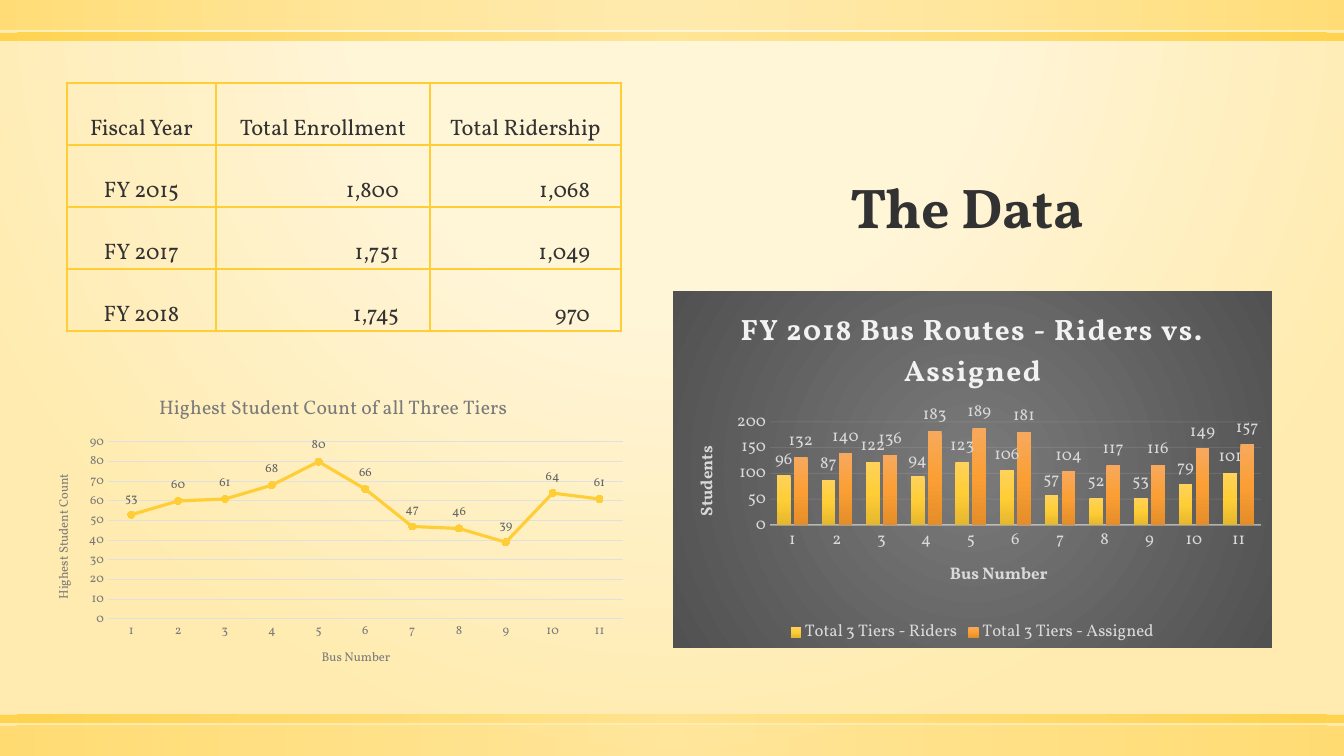
from dataclasses import dataclass
from typing import Any, NamedTuple, Optional

from lxml import etree
from pptx import Presentation
from pptx import util as u
from pptx.chart.data import CategoryChartData
from pptx.dml.color import RGBColor
from pptx.enum import chart as ch, shapes, text
from pptx.oxml import parse_xml
from pptx.oxml.ns import nsdecls, qn

EMU_PER_PX = 12192000 / 1344
FONT = "Vollkorn"
INK = RGBColor(0x32, 0x32, 0x32)
GOLD = RGBColor(0xFF, 0xCD, 0x36)
PALE_GOLD = RGBColor(0xFF, 0xE1, 0x86)
LIGHT_GOLD = RGBColor(0xFF, 0xD2, 0x5B)
DARK_GOLD = RGBColor(0xE5, 0xB7, 0x2E)
LIGHT_ORANGE = RGBColor(0xF6, 0xA9, 0x5E)
ORANGE = RGBColor(0xFB, 0x9F, 0x35)
DARK_ORANGE = RGBColor(0xE5, 0x8D, 0x29)
CREAM = RGBColor(0xFF, 0xF5, 0xD7)
SAND = RGBColor(0xFF, 0xEB, 0xAF)
GREY = RGBColor(0x7A, 0x7A, 0x7A)
LABEL_GREY = RGBColor(0x65, 0x65, 0x65)
CHARCOAL = RGBColor(0x51, 0x51, 0x51)
RULE_GREY = RGBColor(0xE0, 0xE0, 0xE0)
SILVER = RGBColor(0xD9, 0xD9, 0xD9)
OFF_WHITE = RGBColor(0xF2, 0xF2, 0xF2)


class Box(NamedTuple):
    left: int
    top: int
    width: int
    height: int


class Stop(NamedTuple):
    position: int
    color: RGBColor
    opacity: int = 100


@dataclass(frozen=True)
class Gradient:
    """A linear blend when an angle is given, otherwise a circular one."""
    stops: tuple[Stop, ...]
    angle: Optional[int] = None
    focus: tuple[int, int, int, int] = (50, 50, 50, 50)


@dataclass(frozen=True)
class Series:
    name: str
    values: tuple[int, ...]
    gradient: Optional[Gradient] = None


@dataclass(frozen=True)
class BusChart:
    kind: ch.XL_CHART_TYPE
    box: Box
    plot: Box
    title: str
    title_size: int
    title_color: RGBColor
    value_title: str
    top_value: int
    step: int
    size: int
    color: RGBColor
    label_color: RGBColor
    label_position: ch.XL_LABEL_POSITION
    rule_color: RGBColor
    axis_width: float
    axis_opacity: int
    grid_opacity: int
    bold: bool
    series: tuple[Series, ...]
    background: Optional[Gradient] = None


BUSES = [str(bus) for bus in range(1, 12)]
BACKDROP = Gradient((Stop(0, CREAM, 59), Stop(40, CREAM, 66), Stop(100, SAND)), focus=(50, -80, 50, 180))
BANDS = ((Box(0, 726, 1344, 30), 50), (Box(0, 715, 1344, 8), 80),
         (Box(0, 0, 1344, 30), 50), (Box(0, 33, 1344, 8), 80))
COLUMNS = (149, 214, 191)
ROW_HEIGHT = 62
ROWS = (("Fiscal Year", "Total Enrollment", "Total Ridership"),
        ("FY 2015", "1,800", "1,068"),
        ("FY 2017", "1,751", "1,049"),
        ("FY 2018", "1,745", "970"))
HIGHEST_COUNT = BusChart(
    ch.XL_CHART_TYPE.LINE_MARKERS, Box(32, 378, 603, 313), Box(108, 442, 515, 177),
    "Highest Student Count of all Three Tiers", 14, GREY, "Highest Student Count", 90, 10,
    9, GREY, LABEL_GREY, ch.XL_LABEL_POSITION.ABOVE, RULE_GREY, 0.75, 100, 100, False,
    (Series("Series 1", (53, 60, 61, 68, 80, 66, 47, 46, 39, 64, 61)),))
RIDERS_VS_ASSIGNED = BusChart(
    ch.XL_CHART_TYPE.COLUMN_CLUSTERED, Box(673, 291, 599, 357), Box(770, 422, 491, 103),
    "FY 2018 Bus Routes - Riders vs. Assigned", 21, OFF_WHITE, "Students", 200, 50,
    12, SILVER, SILVER, ch.XL_LABEL_POSITION.OUTSIDE_END, OFF_WHITE, 1, 54, 10, True,
    (Series("Total 3 Tiers - Riders", (96, 87, 122, 94, 123, 106, 57, 52, 53, 79, 101),
            Gradient((Stop(0, LIGHT_GOLD), Stop(50, GOLD), Stop(100, DARK_GOLD)), 90)),
     Series("Total 3 Tiers - Assigned", (132, 140, 136, 183, 189, 181, 104, 117, 116, 149, 157),
            Gradient((Stop(0, LIGHT_ORANGE), Stop(50, ORANGE), Stop(100, DARK_ORANGE)), 90))),
    Gradient((Stop(0, GREY), Stop(100, CHARCOAL))))


def px(length: int) -> u.Emu:
    return u.Emu(round(length * EMU_PER_PX))


def place(box: Box) -> list[u.Emu]:
    return [px(length) for length in box]


def style(font: Any, size: int, color: RGBColor, bold: bool = False) -> None:
    font.name, font.size, font.bold = FONT, u.Pt(size), bold
    font.color.rgb = color


def gradient_xml(gradient: Gradient) -> Any:
    stops = "".join(
        f'<a:gs pos="{stop.position * 1000}"><a:srgbClr val="{stop.color}">'
        f'<a:alpha val="{stop.opacity * 1000}"/></a:srgbClr></a:gs>' for stop in gradient.stops)
    if gradient.angle is None:
        sides = " ".join(f'{side}="{share * 1000}"' for side, share in zip("ltrb", gradient.focus))
        direction = f'<a:path path="circle"><a:fillToRect {sides}/></a:path>'
    else:
        direction = f'<a:lin ang="{gradient.angle * 60000}" scaled="0"/>'
    return parse_xml(f'<a:gradFill {nsdecls("a")} rotWithShape="1"><a:gsLst>{stops}</a:gsLst>{direction}</a:gradFill>')


def paint(fill: Any, owner: Any, gradient: Gradient) -> None:
    """Swap the first solid fill inside the owner element for the gradient."""
    fill.solid()
    solid = next(owner.iter(qn("a:solidFill")))
    solid.getparent().replace(solid, gradient_xml(gradient))


def add_band(page: Any, box: Box, opacity: int) -> None:
    band = page.shapes.add_shape(shapes.MSO_SHAPE.RECTANGLE, *place(box))
    band.shadow.inherit = False
    band.line.fill.background()
    paint(band.fill, band.element, Gradient((Stop(0, PALE_GOLD, opacity), Stop(100, GOLD, opacity))))


def add_title(page: Any) -> None:
    frame = page.shapes.add_textbox(*place(Box(735, 100, 464, 146))).text_frame
    frame.word_wrap = True
    frame.vertical_anchor = text.MSO_ANCHOR.BOTTOM
    frame.text = "The Data"
    para = frame.paragraphs[0]
    para.alignment, para.line_spacing = text.PP_ALIGN.CENTER, 0.9
    style(para.runs[0].font, 40, INK, True)


def add_table(page: Any) -> None:
    box = Box(67, 83, sum(COLUMNS), ROW_HEIGHT * len(ROWS))
    table = page.shapes.add_table(len(ROWS), len(COLUMNS), *place(box)).table
    table.first_row = table.horz_banding = False
    for column, width in zip(table.columns, COLUMNS):
        column.width = px(width)
    for r, row in enumerate(ROWS):
        table.rows[r].height = px(ROW_HEIGHT)
        for c, words in enumerate(row):
            cell = table.cell(r, c)
            number = r > 0 and c > 0
            cell.text = words
            cell.vertical_anchor = text.MSO_ANCHOR.BOTTOM
            cell.margin_left = cell.margin_top = px(1)
            cell.margin_right, cell.margin_bottom = px(31 if number else 1), 0
            para = cell.text_frame.paragraphs[0]
            para.alignment = text.PP_ALIGN.RIGHT if number else text.PP_ALIGN.CENTER
            style(para.runs[0].font, 16, INK)
            cell.fill.background()
            properties = cell.fill and next(table.cell(r, c).text_frame._txBody.getparent().iter(qn("a:tcPr")))
            for index, side in enumerate("LRTB"):
                properties.insert(index, parse_xml(
                    f'<a:ln{side} {nsdecls("a")} w="12700"><a:solidFill><a:srgbClr val="{GOLD}"/>'
                    f'</a:solidFill></a:ln{side}>'))


def set_opacity(color: Any, percent: int) -> None:
    etree.SubElement(color, qn("a:alpha")).set("val", str(percent * 1000))


def fix_plot(root: Any, outer: Box, plot: Box) -> None:
    """Pin the inner plot area to its place within the chart."""
    area = root.xpath("c:chart/c:plotArea")[0]
    for layout in area.findall(qn("c:layout")):
        area.remove(layout)
    shares = {"x": (plot.left - outer.left) / outer.width, "y": (plot.top - outer.top) / outer.height,
              "w": plot.width / outer.width, "h": plot.height / outer.height}
    modes = '<c:layoutTarget val="inner"/><c:xMode val="edge"/><c:yMode val="edge"/>'
    sizes = "".join(f'<c:{key} val="{share:.4f}"/>' for key, share in shares.items())
    area.insert(0, parse_xml(
        f'<c:layout {nsdecls("c")}><c:manualLayout>{modes}{sizes}</c:manualLayout></c:layout>'))


def add_chart(page: Any, look: BusChart) -> None:
    data = CategoryChartData()
    data.categories = BUSES
    for series in look.series:
        data.add_series(series.name, series.values)
    chart = page.shapes.add_chart(look.kind, *place(look.box), data).chart
    root = chart.element
    style(chart.font, 10, INK)
    chart.has_title = True
    chart.chart_title.include_in_layout = False
    chart.chart_title.text_frame.text = look.title
    title_font = chart.chart_title.text_frame.paragraphs[0].runs[0].font
    style(title_font, look.title_size, look.title_color, look.bold)
    if look.bold:
        root.xpath("c:chart/c:title//a:r/a:rPr")[0].set("spc", "100")

    for axis, words in ((chart.category_axis, "Bus Number"), (chart.value_axis, look.value_title)):
        axis.axis_title.text_frame.text = words
        style(axis.axis_title.text_frame.paragraphs[0].runs[0].font, look.size, look.color, look.bold)
        style(axis.tick_labels.font, look.size, look.color)
        axis.major_tick_mark = axis.minor_tick_mark = ch.XL_TICK_MARK.NONE
    root.xpath(".//c:valAx/c:title//a:bodyPr")[0].set("rot", "-5400000")
    values = chart.value_axis
    values.minimum_scale, values.maximum_scale, values.major_unit = 0, look.top_value, look.step
    values.format.line.fill.background()
    values.has_major_gridlines = True
    for line, width in ((values.major_gridlines.format.line, 0.75),
                        (chart.category_axis.format.line, look.axis_width)):
        line.width = u.Pt(width)
        line.color.rgb = look.rule_color
    set_opacity(root.xpath(".//c:valAx/c:majorGridlines//a:srgbClr")[0], look.grid_opacity)
    set_opacity(root.xpath(".//c:catAx/c:spPr//a:srgbClr")[0], look.axis_opacity)

    plot = chart.plots[0]
    plot.vary_by_categories = False
    for drawn, series, element in zip(plot.series, look.series, root.iter(qn("c:ser"))):
        if series.gradient:
            paint(drawn.format.fill, element, series.gradient)
        else:
            drawn.smooth = False
            drawn.format.line.width = u.Pt(2.25)
            drawn.format.line.color.rgb = GOLD
            drawn.marker.style, drawn.marker.size = ch.XL_MARKER_STYLE.CIRCLE, 5
            drawn.marker.format.fill.solid()
            drawn.marker.format.fill.fore_color.rgb = GOLD
            drawn.marker.format.line.color.rgb = GOLD
        labels = drawn.data_labels
        labels.show_value, labels.position = True, look.label_position
        style(labels.font, look.size, look.label_color)

    chart.has_legend = len(look.series) > 1
    if chart.has_legend:
        plot.gap_width, plot.overlap = 100, -24
        chart.legend.position = ch.XL_LEGEND_POSITION.BOTTOM
        chart.legend.include_in_layout = False
        style(chart.legend.font, look.size, look.color)
    frame = parse_xml(f'<c:spPr {nsdecls("c", "a")}><a:noFill/><a:ln><a:noFill/></a:ln></c:spPr>')
    if look.background:
        frame.replace(frame[0], gradient_xml(look.background))
    root.find(qn("c:chart")).addnext(frame)
    fix_plot(root, look.box, look.plot)


def main() -> None:
    deck = Presentation()
    deck.slide_width, deck.slide_height = px(1344), px(756)
    page = deck.slides.add_slide(deck.slide_layouts[6])
    paint(page.background.fill, page.element, BACKDROP)
    for box, opacity in BANDS:
        add_band(page, box, opacity)
    add_title(page)
    add_table(page)
    for look in (HIGHEST_COUNT, RIDERS_VS_ASSIGNED):
        add_chart(page, look)
    deck.save("out.pptx")


if __name__ == "__main__":
    main()
